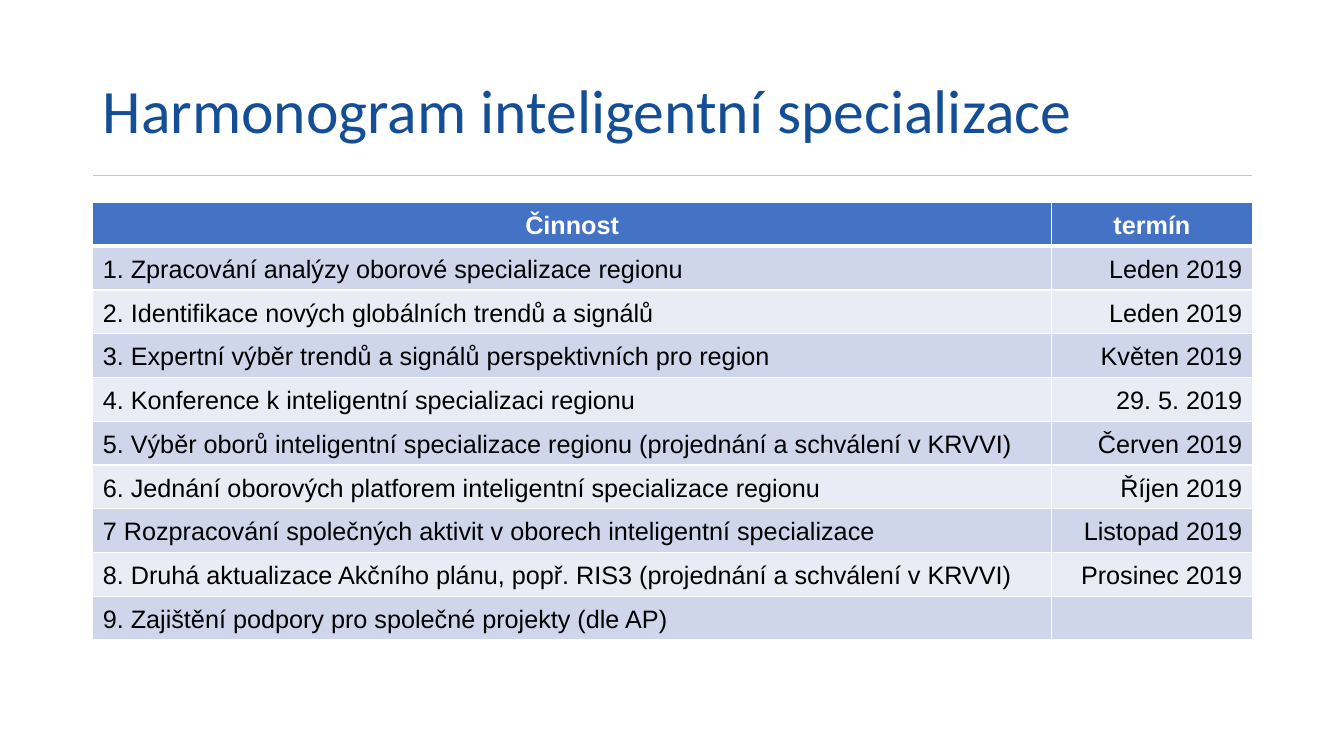
from lxml import etree
from pptx import Presentation
from pptx import util as u
from pptx.dml.color import RGBColor
from pptx.enum import shapes, text
from pptx.oxml.ns import qn

NAVY = RGBColor(0x13, 0x4E, 0x96)
YELLOW = RGBColor(0xFF, 0xCC, 0x00)
WHITE = RGBColor(0xFF, 0xFF, 0xFF)
BLACK = RGBColor(0x00, 0x00, 0x00)
HEADER_BLUE = RGBColor(0x44, 0x72, 0xC4)
BAND_DARK = RGBColor(0xCF, 0xD5, 0xEA)
BAND_LIGHT = RGBColor(0xE9, 0xEB, 0xF5)

SCHEDULE = [
    ("Činnost", "termín"),
    ("1. Zpracování analýzy oborové specializace regionu", "Leden 2019"),
    ("2. Identifikace nových globálních trendů a signálů", "Leden 2019"),
    ("3. Expertní výběr trendů a signálů perspektivních pro region", "Květen 2019"),
    ("4. Konference k inteligentní specializaci regionu", "29. 5. 2019"),
    ("5. Výběr oborů inteligentní specializace regionu (projednání a schválení v KRVVI)",
     "Červen 2019"),
    ("6. Jednání oborových platforem inteligentní specializace regionu", "Říjen 2019"),
    ("7 Rozpracování společných aktivit v oborech inteligentní specializace",
     "Listopad 2019"),
    ("8. Druhá aktualizace Akčního plánu, popř. RIS3 (projednání a schválení v KRVVI)",
     "Prosinec 2019"),
    ("9. Zajištění podpory pro společné projekty (dle AP)", ""),
]
JUSTIFIED_ROW = 8


def add_run(paragraph, words, font_name, size, color, bold=False):
    run = paragraph.add_run()
    run.text = words
    run.font.name = font_name
    run.font.size = u.Pt(size)
    run.font.color.rgb = color
    run.font.bold = bold


def add_heading(slide, left, top, width, height):
    title = slide.shapes.title
    title.left, title.top = u.Inches(left), u.Inches(top)
    title.width, title.height = u.Inches(width), u.Inches(height)
    frame = title.text_frame
    frame.word_wrap = True
    frame.vertical_anchor = text.MSO_ANCHOR.MIDDLE
    paragraph = frame.paragraphs[0]
    paragraph.alignment = text.PP_ALIGN.LEFT
    paragraph.line_spacing = 0.9
    add_run(paragraph, "Harmonogram inteligentní specializace", "Calibri", 44, NAVY)

    rule_y = u.Inches(top + height - 0.11)
    rule = slide.shapes.add_connector(
        shapes.MSO_CONNECTOR.STRAIGHT,
        u.Inches(left), rule_y, u.Inches(left + width), rule_y)
    rule.line.color.rgb = YELLOW
    rule.line.width = u.Pt(1)
    etree.SubElement(rule._element.spPr, qn("a:effectLst"))


def set_borders(cell, widths):
    properties = cell._tc.get_or_add_tcPr()
    for index, (side, points) in enumerate(widths.items()):
        border = etree.Element(qn(f"a:ln{side}"), w=str(u.Pt(points)))
        fill = etree.SubElement(border, qn("a:solidFill"))
        etree.SubElement(fill, qn("a:srgbClr"), val=str(WHITE))
        properties.insert(index, border)


def cell_alignment(row, column):
    if row == 0:
        return text.PP_ALIGN.CENTER
    if column == 1:
        return text.PP_ALIGN.RIGHT
    return text.PP_ALIGN.JUSTIFY if row == JUSTIFIED_ROW else text.PP_ALIGN.LEFT


def format_cell(cell, row, column, words):
    header = row == 0
    cell.fill.solid()
    cell.fill.fore_color.rgb = (
        HEADER_BLUE if header else BAND_DARK if row % 2 else BAND_LIGHT)
    set_borders(cell, {"L": 1, "R": 1, "T": 3 if row == 1 else 1, "B": 3 if header else 1})
    paragraph = cell.text_frame.paragraphs[0]
    paragraph.alignment = cell_alignment(row, column)
    paragraph.line_spacing = 1.15
    if words:
        add_run(paragraph, words, "Arial", 18, WHITE if header else BLACK, header)


def add_schedule(slide, left, top, width, height):
    table = slide.shapes.add_table(
        len(SCHEDULE), 2, u.Inches(left), u.Inches(top),
        u.Inches(width), u.Inches(height)).table
    date_width = 1.99
    table.columns[0].width = u.Inches(width - date_width)
    table.columns[1].width = u.Inches(date_width)
    for row, entries in enumerate(SCHEDULE):
        for column, words in enumerate(entries):
            format_cell(table.cell(row, column), row, column, words)


def main():
    presentation = Presentation()
    presentation.slide_width = u.Inches(13.33)
    presentation.slide_height = u.Inches(7.5)
    slide = presentation.slides.add_slide(presentation.slide_layouts[5])
    add_heading(slide, 0.92, 0.4, 11.5, 1.45)
    add_schedule(slide, 0.92, 2.01, 11.5, 4.34)
    presentation.save("out.pptx")


if __name__ == "__main__":
    main()
